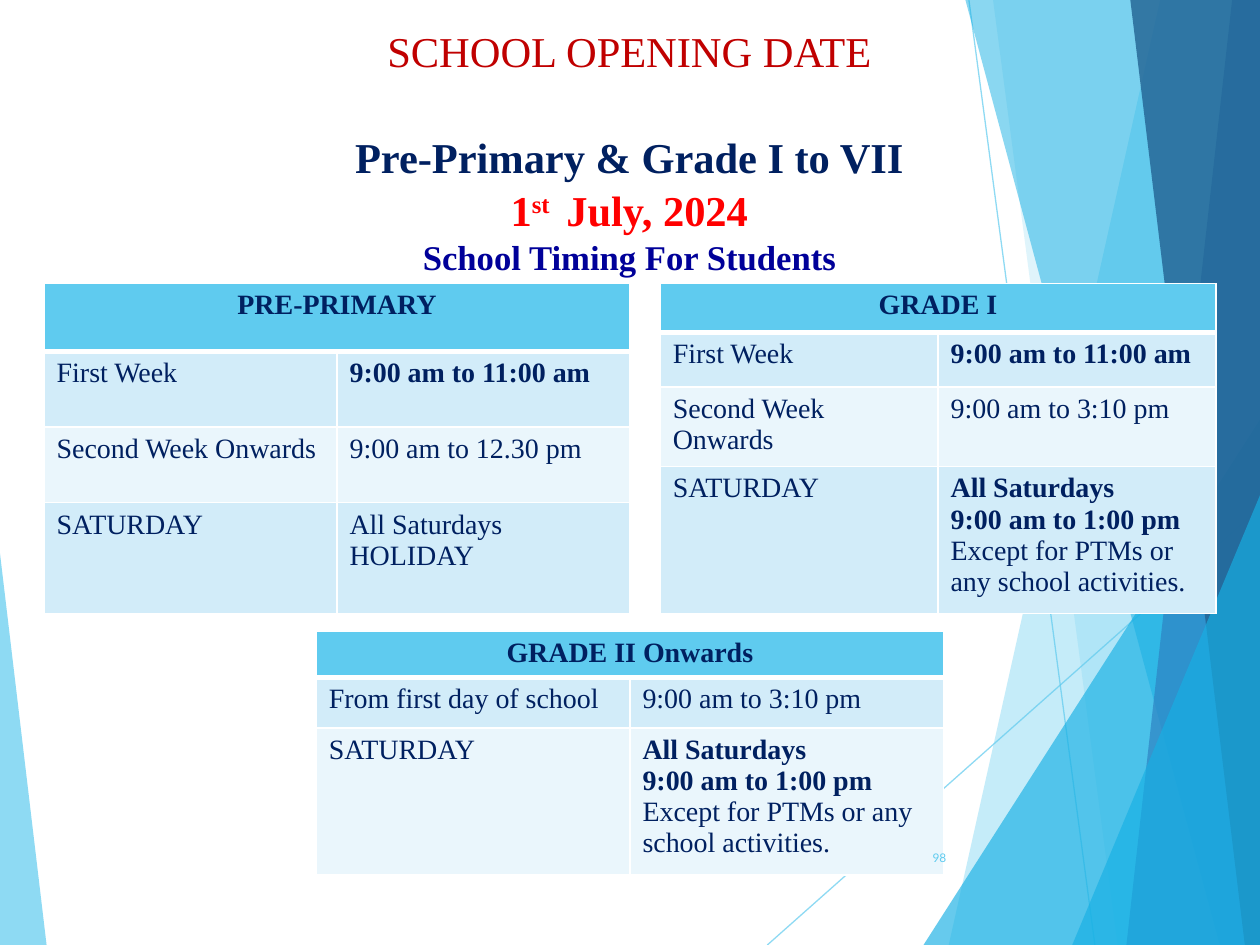
from dataclasses import dataclass

from lxml.etree import SubElement
from pptx import Presentation
from pptx.dml.color import RGBColor
from pptx.enum.shapes import MSO_CONNECTOR as Connector, MSO_SHAPE as Shape
from pptx.enum.text import MSO_ANCHOR as Anchor, PP_ALIGN as Align
from pptx.oxml.ns import qn
from pptx.util import Inches, Pt


@dataclass(frozen=True)
class Theme:
    serif: str = "Times New Roman"
    sans: str = "Lato"
    sky: str = "5FCBEF"
    azure: str = "17B0E4"
    blue: str = "2E83C3"
    deep: str = "226292"
    navy: str = "002060"
    crimson: str = "C00000"
    red: str = "FF0000"
    indigo: str = "000099"
    white: str = "FFFFFF"
    bands: tuple = ("D2ECF9", "EAF6FC")
    title_size: float = 24.3
    subtitle_size: float = 19.8
    table_size: float = 16
    number_size: float = 6.8


THEME = Theme()
WIDTH, HEIGHT = 10, 7.5
FIRST_WEEK, SECOND_WEEK, SATURDAY = "First Week", "Second Week Onwards", "SATURDAY"
SHORT_DAY, FULL_DAY = "9:00 am to 11:00 am", "9:00 am to 3:10 pm"
# A leading * marks a bold line.
SATURDAY_HOURS = ("*All Saturdays", "*9:00 am to 1:00 pm",
                  "Except for PTMs or any school activities.")


def set_font(font, size, color, bold=False, name=THEME.serif):
    font.name, font.size, font.bold = name, Pt(size), bold
    font.color.rgb = RGBColor.from_string(color)


def set_alpha(fill_parent, percent):
    """Make every solid colour under the element partly transparent."""
    for color in fill_parent.iter(qn("a:srgbClr")):
        SubElement(color, qn("a:alpha"), val=str(percent * 1000))


def paint(shape, color, percent):
    shape.shadow.inherit = False
    shape.fill.solid()
    shape.fill.fore_color.rgb = RGBColor.from_string(color)
    shape.line.fill.background()
    set_alpha(shape._element.spPr, percent)


def add_ray(page, start, end):
    ray = page.shapes.add_connector(
        Connector.STRAIGHT, *(Inches(v) for v in (*start, *end)))
    ray.line.color.rgb = RGBColor.from_string(THEME.sky)
    ray.line.width = Pt(0.75)
    properties = ray._element.spPr
    set_alpha(properties, 70)
    SubElement(properties, qn("a:effectLst"))


def add_shard(page, top_x, bottom_x, color, percent):
    """Fill the area between a slanted edge and the right side of the page."""
    points = [(top_x, -0.01), (WIDTH, -0.01), (WIDTH, HEIGHT), (bottom_x, HEIGHT)]
    corners = [(Inches(x), Inches(y)) for x, y in points]
    builder = page.shapes.build_freeform(*corners[0])
    builder.add_line_segments(corners[1:], close=True)
    paint(builder.convert_to_shape(), color, percent)


def add_triangle(page, left, top, width, apex, color, percent):
    """Stand a triangle on the bottom edge; apex is 0 (left) to 1 (right)."""
    triangle = page.shapes.add_shape(
        Shape.ISOSCELES_TRIANGLE, Inches(left), Inches(top),
        Inches(width), Inches(HEIGHT - top))
    triangle.adjustments[0] = apex
    paint(triangle, color, percent)


def add_backdrop(page):
    add_ray(page, (7.69, 0), (8.69, HEIGHT))
    add_ray(page, (WIDTH, 4.03), (6.09, HEIGHT))
    add_shard(page, 9.21, 7.53, THEME.sky, 36)
    add_shard(page, 7.88, 8.87, THEME.sky, 20)
    add_triangle(page, 7.33, 3.33, 2.67, 1, THEME.azure, 66)
    add_shard(page, 7.66, 9.68, THEME.azure, 50)
    add_shard(page, 9.78, 8.94, THEME.blue, 70)
    add_shard(page, 8.97, 9.88, THEME.deep, 80)
    add_triangle(page, 8.51, 3.93, 1.49, 1, THEME.azure, 66)
    add_triangle(page, 0, 4.39, 0.37, 0, THEME.sky, 70)


def add_text_box(page, left, top, width, height, align, anchor):
    box = page.shapes.add_textbox(*(Inches(v) for v in (left, top, width, height)))
    box.text_frame.word_wrap = True
    box.text_frame.vertical_anchor = anchor
    para = box.text_frame.paragraphs[0]
    para.alignment = align
    return para


def add_title(page, left, top, width, height):
    para = add_text_box(page, left, top, width, height, Align.CENTER, Anchor.TOP)
    para.line_spacing = 1.04
    set_font(para.font, THEME.title_size, THEME.navy)
    # text, size, colour, bold, superscript, line breaks after it
    spans = [
        ("SCHOOL OPENING DATE", THEME.title_size, THEME.crimson, False, False, 2),
        ("Pre-Primary & Grade I to VII", THEME.title_size, THEME.navy, True, False, 1),
        ("1", THEME.title_size, THEME.red, True, False, 0),
        ("st ", THEME.title_size, THEME.red, True, True, 0),
        (" July, 2024", THEME.title_size, THEME.red, True, False, 1),
        ("School Timing For Students", THEME.subtitle_size, THEME.indigo, True, False, 0),
    ]
    for text, size, color, bold, raised, breaks in spans:
        span = para.add_run()
        span.text = text
        set_font(span.font, size, color, bold)
        if raised:
            span._r.get_or_add_rPr().set("baseline", "30000")
        for _ in range(breaks):
            para.add_line_break()


def set_borders(cell, bottom):
    properties = cell._tc.get_or_add_tcPr()
    for side, width in (("L", 1), ("R", 1), ("T", 1), ("B", bottom)):
        line = SubElement(properties, qn(f"a:ln{side}"), w=str(Pt(width)))
        fill = SubElement(line, qn("a:solidFill"))
        SubElement(fill, qn("a:srgbClr"), val=THEME.white)


def fill_cell(cell, lines, color, header=False):
    set_borders(cell, 3 if header else 1)
    cell.fill.solid()
    cell.fill.fore_color.rgb = RGBColor.from_string(color)
    cell.text = "\n".join(line.lstrip("*") for line in lines)
    for para, line in zip(cell.text_frame.paragraphs, lines):
        set_font(para.font, THEME.table_size, THEME.navy, line.startswith("*"))
        if header:
            para.alignment = Align.CENTER


def add_timetable(page, left, top, width, heights, heading, entries):
    """Two equal columns under a merged heading; heights are one per row."""
    table = page.shapes.add_table(
        len(heights), 2, Inches(left), Inches(top),
        Inches(width), Inches(sum(heights))).table
    for column in table.columns:
        column.width = Inches(width / 2)
    for row, height in zip(table.rows, heights):
        row.height = Inches(height)
    table.cell(0, 0).merge(table.cell(0, 1))
    fill_cell(table.cell(0, 0), ["*" + heading], THEME.sky, header=True)
    set_borders(table.cell(0, 1), 3)
    for index, (label, hours) in enumerate(entries):
        color = THEME.bands[index % 2]
        fill_cell(table.cell(index + 1, 0), [label], color)
        fill_cell(table.cell(index + 1, 1), hours, color)


def add_page_number(page, left, top, width, height):
    para = add_text_box(page, left, top, width, height, Align.RIGHT, Anchor.MIDDLE)
    para.add_run().text = "98"
    set_font(para.font, THEME.number_size, THEME.sky, name=THEME.sans)


def main():
    deck = Presentation()
    deck.slide_width, deck.slide_height = Inches(WIDTH), Inches(HEIGHT)
    page = deck.slides.add_slide(deck.slide_layouts[6])
    add_backdrop(page)
    add_title(page, 1.62, 0.13, 6.75, 0.55)
    add_timetable(page, 0.35, 2.25, 4.65, (0.54, 0.6, 0.6, 0.88), "PRE-PRIMARY", [
        (FIRST_WEEK, ["*" + SHORT_DAY]),
        (SECOND_WEEK, ["9:00 am to 12.30 pm"]),
        (SATURDAY, ["All Saturdays HOLIDAY"])])
    add_timetable(page, 2.51, 5.01, 4.98, (0.35, 0.4, 1.08), "GRADE II Onwards", [
        ("From first day of school", [FULL_DAY]),
        (SATURDAY, SATURDAY_HOURS)])
    add_timetable(page, 5.24, 2.25, 4.41, (0.39, 0.43, 0.6, 1.08), "GRADE I", [
        (FIRST_WEEK, ["*" + SHORT_DAY]),
        (SECOND_WEEK, [FULL_DAY]),
        (SATURDAY, SATURDAY_HOURS)])
    add_page_number(page, 7.05, 6.61, 0.56, 0.4)
    deck.save("out.pptx")


if __name__ == "__main__":
    main()
